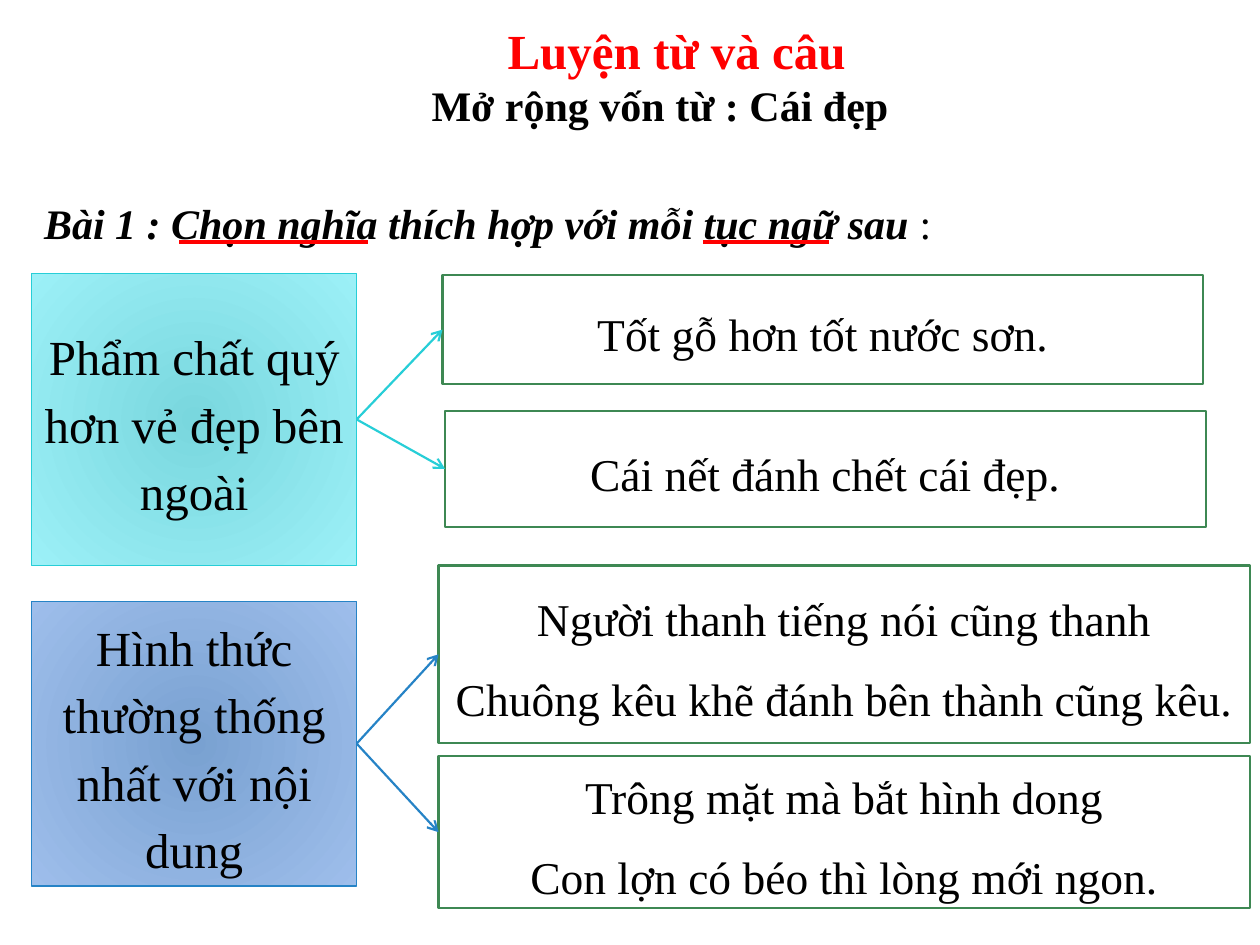
"""Build a vocabulary slide that links two meanings to their matching proverbs."""
from dataclasses import dataclass

from lxml import etree
from pptx import Presentation
from pptx.dml.color import RGBColor
from pptx.enum.shapes import MSO_CONNECTOR, MSO_SHAPE
from pptx.enum.text import MSO_ANCHOR, MSO_AUTO_SIZE, PP_ALIGN
from pptx.oxml.ns import qn
from pptx.util import Cm, Pt

RECT = MSO_SHAPE.RECTANGLE
STRAIGHT = MSO_CONNECTOR.STRAIGHT
LEFT, CENTER = PP_ALIGN.LEFT, PP_ALIGN.CENTER
MIDDLE = MSO_ANCHOR.MIDDLE
FIT_SHAPE = MSO_AUTO_SIZE.SHAPE_TO_FIT_TEXT
LEFT_SIDE, RIGHT_SIDE = 1, 3


@dataclass(frozen=True)
class Theme:
    font: str = "Times New Roman"
    text: str = "000000"
    accent: str = "FF0000"
    paper: str = "FFFFFF"
    frame: str = "3E8853"
    large: float = 28
    medium: float = 26
    small: float = 24
    thin: float = 0.75
    normal: float = 1.25
    thick: float = 2.75


@dataclass(frozen=True)
class Box:
    x: float
    y: float
    w: float
    h: float
    text: str


@dataclass(frozen=True)
class Meaning:
    box: Box
    inner: str
    outer: str
    line: str
    proverbs: tuple[Box, ...]


THEME = Theme()
TITLE = Box(7.19, 0.28, 12.9, 1.45, "Luyện từ và câu")
SUBTITLE = Box(6.32, 1.47, 13.97, 1.27, "Mở rộng vốn từ : Cái đẹp")
TASK = Box(0.64, 3.86, 23.55, 1.27, "Bài 1 : Chọn nghĩa thích hợp với mỗi tục ngữ sau ")
UNDERLINE_Y = 4.88
UNDERLINES = ((3.61, 7.42), (14.17, 16.71))
MEANINGS = (
    Meaning(
        Box(0.64, 5.51, 6.55, 5.89, "Phẩm chất quý hơn vẻ đẹp bên ngoài"),
        "79D7DE", "9CF0F7", "27CED7",
        (Box(8.92, 5.54, 15.34, 2.21, "Tốt gỗ hơn tốt nước sơn."),
         Box(8.97, 8.28, 15.34, 2.34, "Cái nết đánh chết cái đẹp.")),
    ),
    Meaning(
        Box(0.64, 12.12, 6.55, 5.74, "Hình thức thường thống nhất với nội dung"),
        "79A1D1", "9EBEEB", "2683C6",
        (Box(8.84, 11.4, 16.36, 3.58,
             "Người thanh tiếng nói cũng thanh\nChuông kêu khẽ đánh bên thành cũng kêu."),
         Box(8.84, 15.24, 16.36, 3.07,
             "Trông mặt mà bắt hình dong\nCon lợn có béo thì lòng mới ngon.")),
    ),
)


def rgb(color: str) -> RGBColor:
    return RGBColor.from_string(color)


def style_run(r, size: float, color: str = THEME.text, bold: bool = False, italic: bool = False) -> None:
    r.font.name = THEME.font
    r.font.size = Pt(size)
    r.font.color.rgb = rgb(color)
    r.font.bold = bold
    r.font.italic = italic


def add_heading(s, box: Box, size: float, color: str = THEME.text, align=CENTER, italic: bool = False):
    sp = s.shapes.add_textbox(Cm(box.x), Cm(box.y), Cm(box.w), Cm(box.h))
    tf = sp.text_frame
    tf.word_wrap = True
    tf.auto_size = FIT_SHAPE
    tf.text = box.text
    p = tf.paragraphs[0]
    p.alignment = align
    style_run(p.runs[0], size, color, True, italic)
    return p


def add_box(s, box: Box, size: float, line: str, width: float):
    sp = s.shapes.add_shape(RECT, Cm(box.x), Cm(box.y), Cm(box.w), Cm(box.h))
    sp.shadow.inherit = False
    sp.fill.solid()
    sp.fill.fore_color.rgb = rgb(THEME.paper)
    sp.line.color.rgb = rgb(line)
    sp.line.width = Pt(width)
    tf = sp.text_frame
    tf.word_wrap = True
    tf.vertical_anchor = MIDDLE
    tf.text = box.text
    for p in tf.paragraphs:
        p.alignment = CENTER
        p.line_spacing = 1.15
        p.space_after = Pt(10)
        style_run(p.runs[0], size)
    return sp


def fill_radial(sp, inner: str, outer: str) -> None:
    sp.fill.gradient()
    for stop, color in zip(sp.fill.gradient_stops, (inner, outer)):
        stop.color.rgb = rgb(color)
    grad = sp._element.spPr.find(qn("a:gradFill"))
    grad.remove(grad.find(qn("a:lin")))
    radial = etree.SubElement(grad, qn("a:path"), {"path": "circle"})
    etree.SubElement(radial, qn("a:fillToRect"), dict.fromkeys("ltrb", "100000"))


def add_line(s, x1: float, y1: float, x2: float, y2: float, color: str, width: float):
    sp = s.shapes.add_connector(STRAIGHT, Cm(x1), Cm(y1), Cm(x2), Cm(y2))
    sp.line.color.rgb = rgb(color)
    sp.line.width = Pt(width)
    etree.SubElement(sp._element.spPr, qn("a:effectLst"))
    return sp


def add_arrow(s, source, target, color: str) -> None:
    sp = add_line(s, 0, 0, 0, 0, color, THEME.normal)
    sp.begin_connect(source, RIGHT_SIDE)
    sp.end_connect(target, LEFT_SIDE)
    etree.SubElement(sp.line._get_or_add_ln(), qn("a:tailEnd"), {"type": "arrow"})


def add_meaning(s, meaning: Meaning) -> None:
    source = add_box(s, meaning.box, THEME.large, meaning.line, THEME.thin)
    fill_radial(source, meaning.inner, meaning.outer)
    for proverb in meaning.proverbs:
        target = add_box(s, proverb, THEME.medium, THEME.frame, THEME.normal)
        add_arrow(s, source, target, meaning.line)


def main() -> None:
    prs = Presentation()
    prs.slide_width, prs.slide_height = Cm(25.4), Cm(19.05)
    s = prs.slides.add_slide(prs.slide_layouts[6])
    add_heading(s, TITLE, THEME.large, THEME.accent)
    add_heading(s, SUBTITLE, THEME.small)
    p = add_heading(s, TASK, THEME.small, align=LEFT, italic=True)
    r = p.add_run()
    r.text = ":"
    style_run(r, THEME.small)
    for meaning in MEANINGS:
        add_meaning(s, meaning)
    for start, end in UNDERLINES:
        add_line(s, start, UNDERLINE_Y, end, UNDERLINE_Y, THEME.accent, THEME.thick)
    prs.save("out.pptx")


if __name__ == "__main__":
    main()
